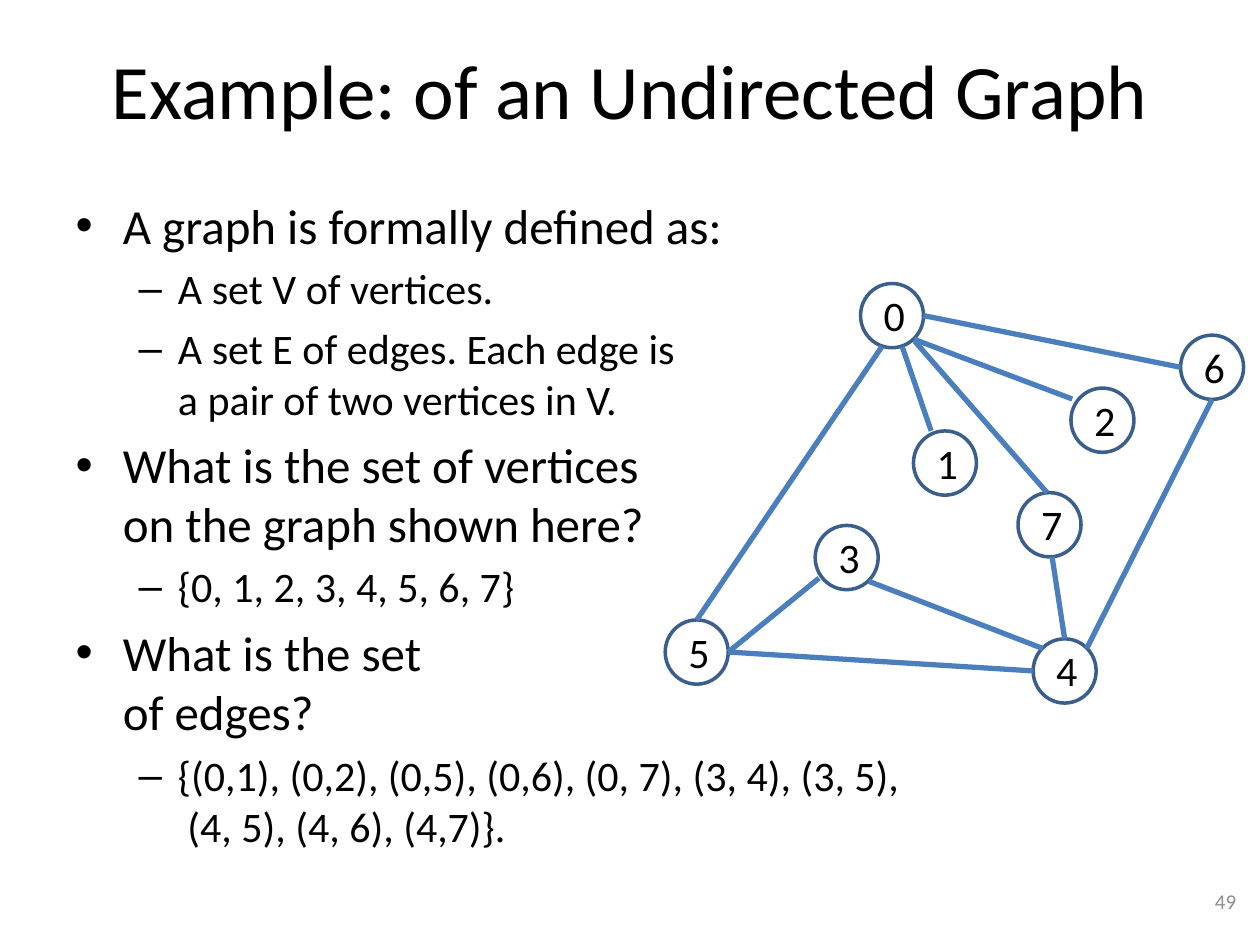
from lxml.etree import SubElement
from pptx import Presentation
from pptx.dml.color import RGBColor
from pptx.enum.shapes import MSO_CONNECTOR as Connector, MSO_SHAPE as Shape
from pptx.enum.text import MSO_ANCHOR as Anchor, MSO_AUTO_SIZE as AutoSize, PP_ALIGN as Align
from pptx.oxml.ns import qn
from pptx.util import Inches, Pt

BLACK = RGBColor(0x00, 0x00, 0x00)
GREY = RGBColor(0x8C, 0x8C, 0x8C)
NODE_LINE = RGBColor(0x3A, 0x5F, 0x8C)
EDGE_LINE = RGBColor(0x4B, 0x7E, 0xBC)
FONT = "Calibri"
LEVEL_SIZES = (28, 24)
NODE_WIDTH, NODE_HEIGHT = 0.5, 0.51

BODY = [
    (0, "A graph is formally defined as:"),
    (1, "A set V of vertices."),
    (1, "A set E of edges. Each edge is \va pair of two vertices in V."),
    (0, "What is the set of vertices\von the graph shown here?"),
    (1, "{0, 1, 2, 3, 4, 5, 6, 7}"),
    (0, "What is the set\vof edges?"),
    (1, "{(0,1), (0,2), (0,5), (0,6), (0, 7), (3, 4), (3, 5),\v (4, 5), (4, 6), (4,7)}."),
]

NODES = {
    0: (6.83, 2.25), 1: (7.25, 3.42), 7: (8.08, 3.91), 2: (8.5, 3.08),
    5: (5.28, 4.92), 3: (6.47, 4.17), 4: (8.2, 5.07), 6: (9.37, 2.66),
}

TOP, LEFT, BOTTOM, RIGHT = (0.5, 0), (0, 0.5), (0.5, 1), (1, 0.5)
UPPER_LEFT, UPPER_RIGHT, LOWER_RIGHT = (0.15, 0.15), (0.85, 0.15), (0.85, 0.87)

EDGES = [
    (0, RIGHT, 6, LEFT),
    (0, LOWER_RIGHT, 2, (0.02, 0.17)),
    (0, (0.66, 0.98), 1, (0.28, 0)),
    (0, (0.34, 0.98), 5, TOP),
    (0, (0.86, 0.9), 7, (0.46, 0)),
    (5, RIGHT, 3, (0.06, 0.82)),
    (5, RIGHT, 4, LEFT),
    (3, LOWER_RIGHT, 4, UPPER_LEFT),
    (7, (0.54, 1), 4, TOP),
    (6, BOTTOM, 4, UPPER_RIGHT),
]


def place(shape, left, top, width, height):
    shape.left, shape.top = Inches(left), Inches(top)
    shape.width, shape.height = Inches(width), Inches(height)


def format_runs(para, size, color=BLACK):
    for span in para.runs:
        span.font.name = FONT
        span.font.size = Pt(size)
        span.font.color.rgb = color


def fill_title(page, text):
    title = page.shapes.title
    place(title, 0.5, 0.08, 9, 1.25)
    title.text_frame.text = text
    format_runs(title.text_frame.paragraphs[0], 44)


def fill_body(page, items):
    body = page.placeholders[1]
    place(body, 0.5, 1.5, 9, 1.83)
    frame = body.text_frame
    frame.auto_size = AutoSize.NONE
    for index, (level, text) in enumerate(items):
        para = frame.add_paragraph() if index else frame.paragraphs[0]
        para.text = text
        para.level = level
        format_runs(para, LEVEL_SIZES[level])


def add_label(shapes, text, area, size, align, color=BLACK):
    box = shapes.add_textbox(*map(Inches, area))
    frame = box.text_frame
    frame.word_wrap = True
    frame.text = text
    frame.paragraphs[0].alignment = align
    format_runs(frame.paragraphs[0], size, color)
    return box


def add_node(shapes, number, left, top):
    area = (left, top, NODE_WIDTH, NODE_HEIGHT)
    circle = shapes.add_shape(Shape.OVAL, *map(Inches, area))
    circle.shadow.inherit = False
    circle.fill.background()
    circle.line.color.rgb = NODE_LINE
    circle.line.width = Pt(2)
    add_label(shapes, f" {number}", (left, top, 0.46, 0.5), 24, Align.CENTER)


def node_point(number, share):
    left, top = NODES[number]
    return Inches(left + share[0] * NODE_WIDTH), Inches(top + share[1] * NODE_HEIGHT)


def add_edge(shapes, start, start_share, end, end_share):
    edge = shapes.add_connector(
        Connector.STRAIGHT, *node_point(start, start_share), *node_point(end, end_share)
    )
    edge.line.color.rgb = EDGE_LINE
    edge.line.width = Pt(3)
    SubElement(edge._element.spPr, qn("a:effectLst"))


def add_graph(page):
    graph = page.shapes.add_group_shape()
    for number, corner in NODES.items():
        add_node(graph.shapes, number, *corner)
    for edge in EDGES:
        add_edge(graph.shapes, *edge)


def main():
    deck = Presentation()
    deck.slide_width, deck.slide_height = Inches(10), Inches(7.5)
    page = deck.slides.add_slide(deck.slide_layouts[1])
    fill_title(page, "Example: of an Undirected Graph")
    fill_body(page, BODY)
    number = add_label(page.shapes, "49", (7.58, 6.95, 2.33, 0.4), 12, Align.RIGHT, GREY)
    number.text_frame.vertical_anchor = Anchor.MIDDLE
    add_graph(page)
    deck.save("out.pptx")


if __name__ == "__main__":
    main()
